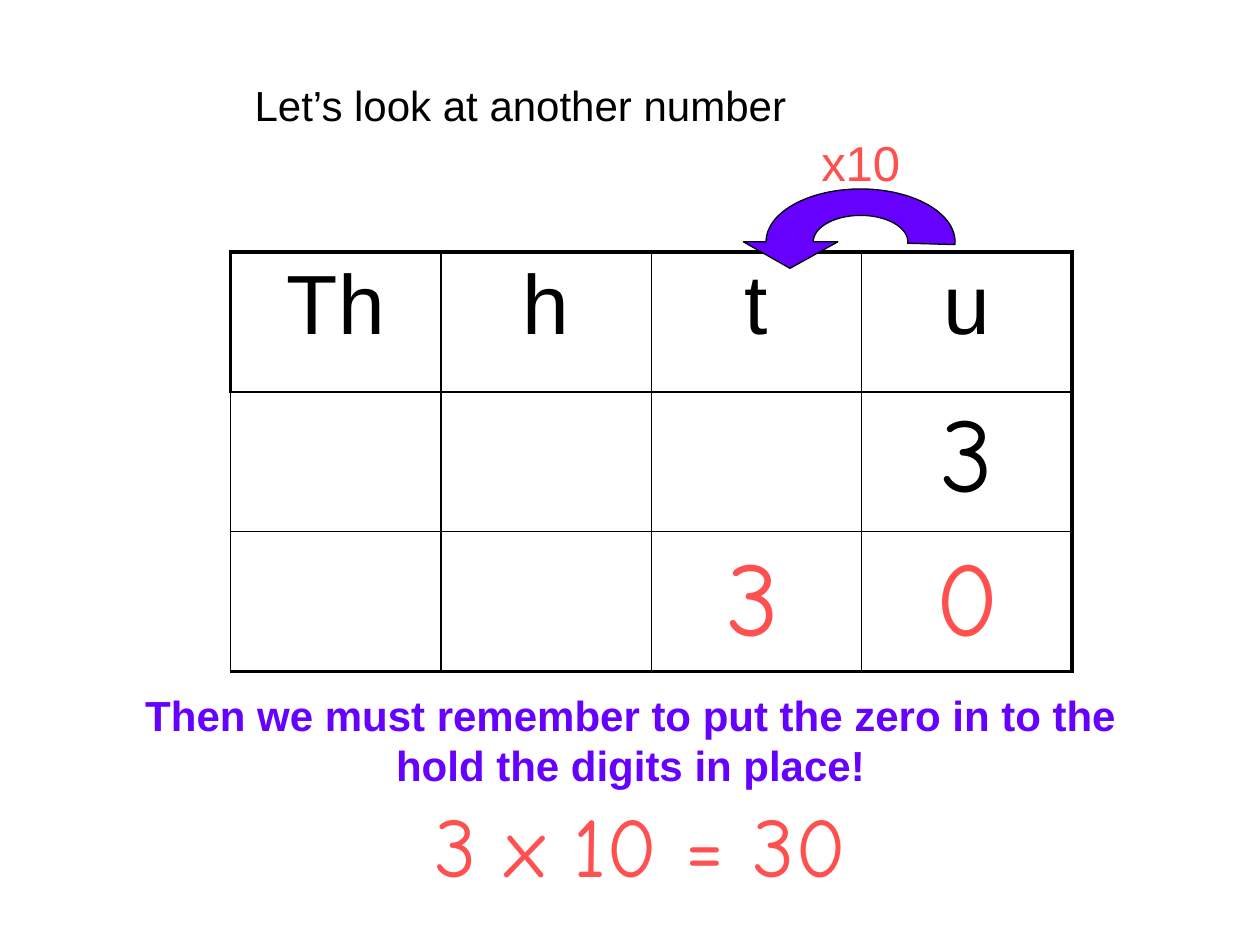
from dataclasses import dataclass
from math import cos, radians, sin

from lxml import etree
from pptx import Presentation
from pptx.dml.color import RGBColor
from pptx.enum.text import MSO_AUTO_SIZE, PP_ALIGN
from pptx.oxml.ns import qn
from pptx.util import Inches, Pt

LEFT, CENTER = PP_ALIGN.LEFT, PP_ALIGN.CENTER
GROW = MSO_AUTO_SIZE.SHAPE_TO_FIT_TEXT
COLORS = {"black": "000000", "red": "FF5050", "violet": "6600FF"}
SANS, HAND = "Arial", "Comic Neue"
THIN, THICK = 1, 2.25

ROWS = [["Th", "h", "t", "u"], ["", "", "", "3"], ["", "", "", ""]]
COL_W, ROW_H = 1.67, 1.11


@dataclass
class Label:
    text: str
    left: float
    top: float
    width: float
    height: float
    size: float
    font: str = SANS
    color: str = "red"
    align: PP_ALIGN = LEFT
    bold: bool = False
    wrap: bool = True


TITLE = Label("Let’s look at another number", 0.42, 0.58, 7.42, 0.5, 24,
              color="black", align=CENTER)
EQUATION = Label("3 x 10 = 30", 2.42, 6.25, 5.33, 0.9, 48, HAND, align=CENTER)
OVERLAYS = [
    Label("x10", 6.42, 1, 1, 0.57, 28),
    Label("3", 5.67, 4.17, 0.71, 1.1, 60, HAND, wrap=False),
    Label("Then we must remember to put the zero in to the hold the digits in place!",
          0.92, 5.42, 8.17, 0.91, 24, color="violet", align=CENTER, bold=True),
    Label("0", 7.33, 4.17, 1, 1.1, 60, HAND),
]


def rgb(name: str) -> RGBColor:
    return RGBColor.from_string(COLORS[name])


def write(tf, text: str, *, size: float, font: str = SANS, color: str = "black",
          align: PP_ALIGN = CENTER, bold: bool = False) -> None:
    p = tf.paragraphs[0]
    p.alignment = align
    r = p.add_run()
    r.text = text
    r.font.size, r.font.name, r.font.bold = Pt(size), font, bold
    r.font.color.rgb = rgb(color)


def add_label(s, label: Label) -> None:
    box = s.shapes.add_textbox(Inches(label.left), Inches(label.top),
                               Inches(label.width), Inches(label.height))
    tf = box.text_frame
    tf.word_wrap, tf.auto_size = label.wrap, GROW
    write(tf, label.text, size=label.size, font=label.font, color=label.color,
          align=label.align, bold=label.bold)


def set_borders(cell, widths: dict[str, float]) -> None:
    """Borders go before the fill, in the order left, right, top, bottom."""
    tc_pr = cell._tc.get_or_add_tcPr()
    for i, (side, width) in enumerate(widths.items()):
        ln = etree.Element(qn(f"a:ln{side}"), w=str(int(Pt(width))))
        fill = etree.SubElement(ln, qn("a:solidFill"))
        etree.SubElement(fill, qn("a:srgbClr"), val=COLORS["black"])
        tc_pr.insert(i, ln)


def add_place_value_table(s) -> None:
    n_rows, n_cols = len(ROWS), len(ROWS[0])
    table = s.shapes.add_table(n_rows, n_cols, Inches(1.83), Inches(2),
                               Inches(COL_W * n_cols), Inches(ROW_H * n_rows)).table
    table.first_row = table.horz_banding = False
    for col in table.columns:
        col.width = Inches(COL_W)
    for i, row in enumerate(ROWS):
        table.rows[i].height = Inches(ROW_H)
        for j, text in enumerate(row):
            cell = table.cell(i, j)
            cell.fill.background()
            set_borders(cell, {
                "L": THICK if i == j == 0 else THIN,
                "R": THICK if j == n_cols - 1 else THIN,
                "T": THICK if i == 0 else THIN,
                "B": THICK if i == n_rows - 1 else THIN,
            })
            if text:
                write(cell.text_frame, text, size=60 if i else 48,
                      font=HAND if i else SANS)


def arc(rx: float, ry: float) -> list[tuple[float, float]]:
    """Points from the left end over the top to just below the right end."""
    return [(6.83 + rx * cos(radians(a)), 1.92 - ry * sin(radians(a)))
            for a in range(180, -4, -3)]


def add_curved_arrow(s) -> None:
    head = [(5.9, 1.92), (6.27, 2.13), (6.65, 1.92)]
    points = arc(0.375, 0.21) + arc(0.75, 0.42)[::-1] + head
    (x, y), *rest = [(Inches(px), Inches(py)) for px, py in points]
    builder = s.shapes.build_freeform(x, y)
    builder.add_line_segments(rest, close=True)
    sp = builder.convert_to_shape()
    sp.shadow.inherit = False
    sp.fill.solid()
    sp.fill.fore_color.rgb = rgb("violet")
    sp.line.color.rgb = rgb("black")
    sp.line.width = Pt(0.75)


def main() -> None:
    prs = Presentation()
    prs.slide_width, prs.slide_height = Inches(10), Inches(7.5)
    s = prs.slides.add_slide(prs.slide_layouts[6])

    # Heading and result
    add_label(s, TITLE)
    add_label(s, EQUATION)

    # Place value grid with the jump from units to tens
    add_place_value_table(s)
    add_curved_arrow(s)

    # Answer digits and explanation
    for label in OVERLAYS:
        add_label(s, label)

    prs.save("out.pptx")


if __name__ == "__main__":
    main()
